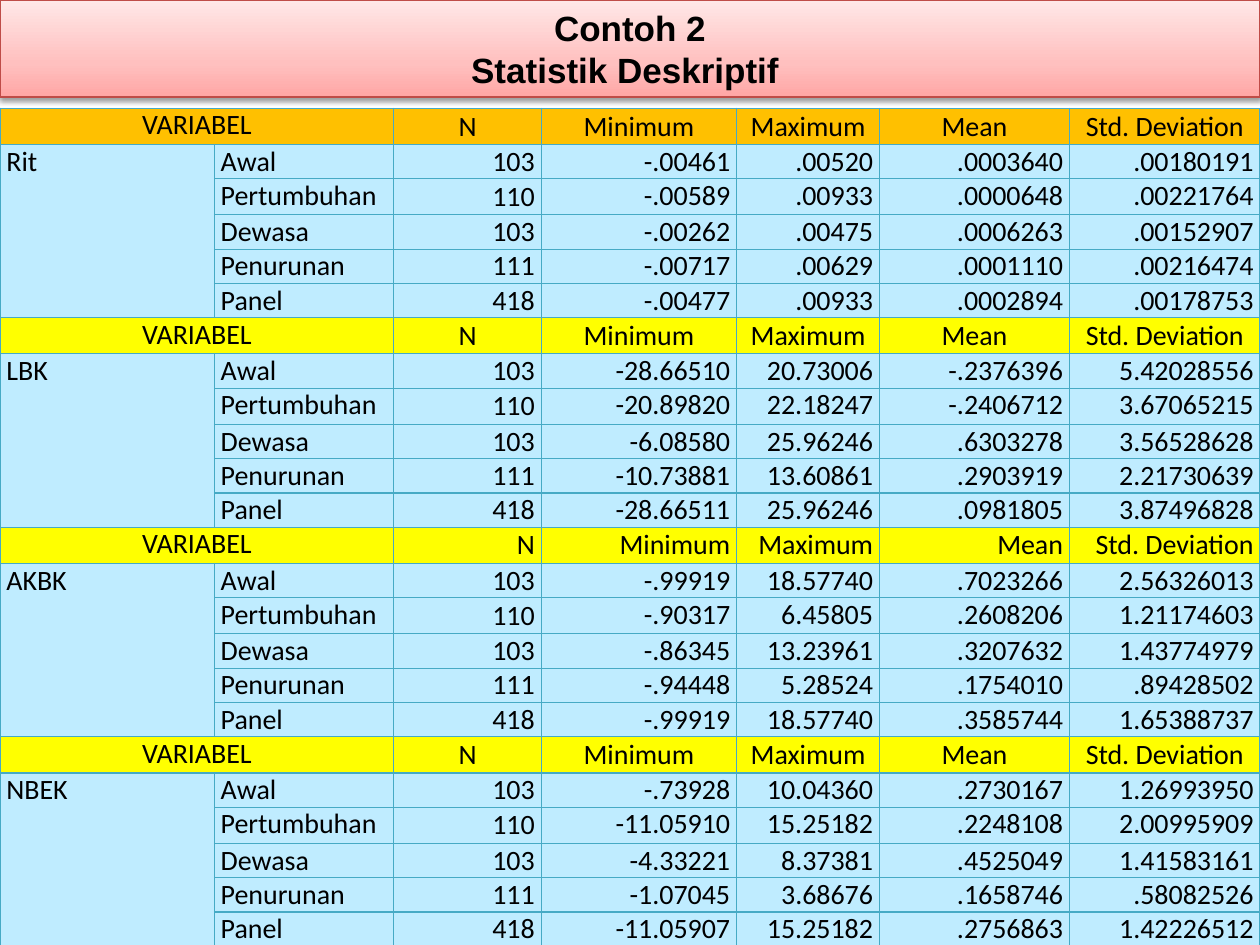
"""Build a slide with a table of descriptive statistics for four variables."""
from lxml import etree
from pptx import Presentation
from pptx.dml.color import RGBColor
from pptx.enum.shapes import MSO_SHAPE
from pptx.enum.text import MSO_ANCHOR, MSO_AUTO_SIZE, PP_ALIGN
from pptx.oxml.ns import qn
from pptx.util import Cm, Pt

LEFT, CENTER, RIGHT = PP_ALIGN.LEFT, PP_ALIGN.CENTER, PP_ALIGN.RIGHT
TOP, MIDDLE, BOTTOM = MSO_ANCHOR.TOP, MSO_ANCHOR.MIDDLE, MSO_ANCHOR.BOTTOM
RECTANGLE = MSO_SHAPE.RECTANGLE
FIT_SHAPE = MSO_AUTO_SIZE.SHAPE_TO_FIT_TEXT

BLACK = RGBColor(0x00, 0x00, 0x00)
ORANGE = RGBColor(0xFF, 0xC0, 0x00)
YELLOW = RGBColor(0xFF, 0xFF, 0x00)
PALE_BLUE = RGBColor(0xBF, 0xEC, 0xFF)
TEAL = RGBColor(0x46, 0xAA, 0xC5)
RED = RGBColor(0xBF, 0x4C, 0x48)
TITLE_STOPS = [
    (0, RGBColor(0xFF, 0xA6, 0xA5)),
    (35, RGBColor(0xFF, 0xC0, 0xBF)),
    (100, RGBColor(0xFF, 0xE7, 0xE7)),
]

TITLE = "Contoh 2\nStatistik Deskriptif "
HEADERS = ["VARIABEL", "", "N", "Minimum", "Maximum", "Mean", "Std. Deviation"]
STAGES = [("Awal", "103"), ("Pertumbuhan", "110"), ("Dewasa", "103"),
          ("Penurunan", "111"), ("Panel", "418")]
BLOCKS = [
    ("Rit", ORANGE, CENTER, BOTTOM, [
        ("-.00461", ".00520", ".0003640", ".00180191"),
        ("-.00589", ".00933", ".0000648", ".00221764"),
        ("-.00262", ".00475", ".0006263", ".00152907"),
        ("-.00717", ".00629", ".0001110", ".00216474"),
        ("-.00477", ".00933", ".0002894", ".00178753"),
    ]),
    ("LBK", YELLOW, CENTER, MIDDLE, [
        ("-28.66510", "20.73006", "-.2376396", "5.42028556"),
        ("-20.89820", "22.18247", "-.2406712", "3.67065215"),
        ("-6.08580", "25.96246", ".6303278", "3.56528628"),
        ("-10.73881", "13.60861", ".2903919", "2.21730639"),
        ("-28.66511", "25.96246", ".0981805", "3.87496828"),
    ]),
    ("AKBK", YELLOW, RIGHT, MIDDLE, [
        ("-.99919", "18.57740", ".7023266", "2.56326013"),
        ("-.90317", "6.45805", ".2608206", "1.21174603"),
        ("-.86345", "13.23961", ".3207632", "1.43774979"),
        ("-.94448", "5.28524", ".1754010", ".89428502"),
        ("-.99919", "18.57740", ".3585744", "1.65388737"),
    ]),
    ("NBEK", YELLOW, CENTER, MIDDLE, [
        ("-.73928", "10.04360", ".2730167", "1.26993950"),
        ("-11.05910", "15.25182", ".2248108", "2.00995909"),
        ("-4.33221", "8.37381", ".4525049", "1.41583161"),
        ("-1.07045", "3.68676", ".1658746", ".58082526"),
        ("-11.05907", "15.25182", ".2756863", "1.42226512"),
    ]),
]
COL_WIDTHS = [4.32, 3.62, 2.97, 3.94, 2.88, 3.83, 3.84]
BLOCK_HEIGHTS = [0.73, 0.64, 0.73, 0.64, 0.64, 0.64]


def add_color(parent, color):
    return etree.SubElement(parent, qn("a:srgbClr"), val=str(color))


def style_runs(tf, font, size, align, bold=False):
    for p in tf.paragraphs:
        p.alignment = align
        for r in p.runs:
            r.font.name = font
            r.font.size = Pt(size)
            r.font.bold = bold
            r.font.color.rgb = BLACK


def fill_cell(cell, text, fill, align, anchor):
    cell.text = text
    cell.margin_left = cell.margin_right = Cm(0.13)
    cell.margin_top = cell.margin_bottom = 0
    cell.vertical_anchor = anchor
    style_runs(cell.text_frame, "Calibri", 16, align)
    props = cell._tc.get_or_add_tcPr()
    for side in ("a:lnL", "a:lnR", "a:lnT", "a:lnB"):
        ln = etree.SubElement(props, qn(side), w=str(Pt(0.75)))
        add_color(etree.SubElement(ln, qn("a:solidFill")), TEAL)
    cell.fill.solid()
    cell.fill.fore_color.rgb = fill


def add_statistics(slide):
    size = len(BLOCK_HEIGHTS)
    table = slide.shapes.add_table(
        size * len(BLOCKS), len(HEADERS), 0, Cm(2.18), Cm(25.4), Cm(16.66)).table
    table.first_row = table.horz_banding = False
    for col, width in zip(table.columns, COL_WIDTHS):
        col.width = Cm(width)
    for i, row in enumerate(table.rows):
        row.height = Cm(BLOCK_HEIGHTS[i % size])

    for b, (name, color, align, anchor, values) in enumerate(BLOCKS):
        top = b * size
        for c, text in enumerate(HEADERS):
            fill_cell(table.cell(top, c), text, color,
                      align if c > 1 else CENTER, anchor if c > 1 else TOP)
        for i, ((stage, n), numbers) in enumerate(zip(STAGES, values)):
            texts = [name if i == 0 else "", stage, n, *numbers]
            for c, text in enumerate(texts):
                centred = c == 2 and stage != "Panel"
                fill_cell(table.cell(top + 1 + i, c), text, PALE_BLUE,
                          RIGHT if c > 1 else LEFT, MIDDLE if centred else TOP)
        table.cell(top, 0).merge(table.cell(top, 1))
        table.cell(top + 1, 0).merge(table.cell(top + size - 1, 0))


def add_title(slide):
    sp = slide.shapes.add_shape(RECTANGLE, 0, 0, Cm(25.4), Cm(1.96))
    sp.line.color.rgb = RED
    sp.line.width = Pt(0.75)
    sp.fill.gradient()
    sp.fill.gradient_angle = 90
    props = sp._element.spPr
    stops = props.find(".//" + qn("a:gsLst"))
    stops.clear()
    for pos, color in TITLE_STOPS:
        add_color(etree.SubElement(stops, qn("a:gs"), pos=str(pos * 1000)), color)

    sp.shadow.inherit = False
    shadow = etree.SubElement(
        props.find(qn("a:effectLst")), qn("a:outerShdw"), blurRad=str(Pt(3.1)),
        dist=str(Pt(1.6)), dir="5400000", rotWithShape="0")
    etree.SubElement(add_color(shadow, BLACK), qn("a:alpha"), val="38000")

    tf = sp.text_frame
    tf.text = TITLE
    tf.word_wrap = True
    tf.auto_size = FIT_SHAPE
    tf.vertical_anchor = MIDDLE
    style_runs(tf, "Arial", 20, CENTER, bold=True)


def main():
    prs = Presentation()
    prs.slide_width, prs.slide_height = Cm(25.4), Cm(19.05)
    slide = prs.slides.add_slide(prs.slide_layouts[6])
    add_statistics(slide)
    add_title(slide)
    prs.save("out.pptx")


if __name__ == "__main__":
    main()
